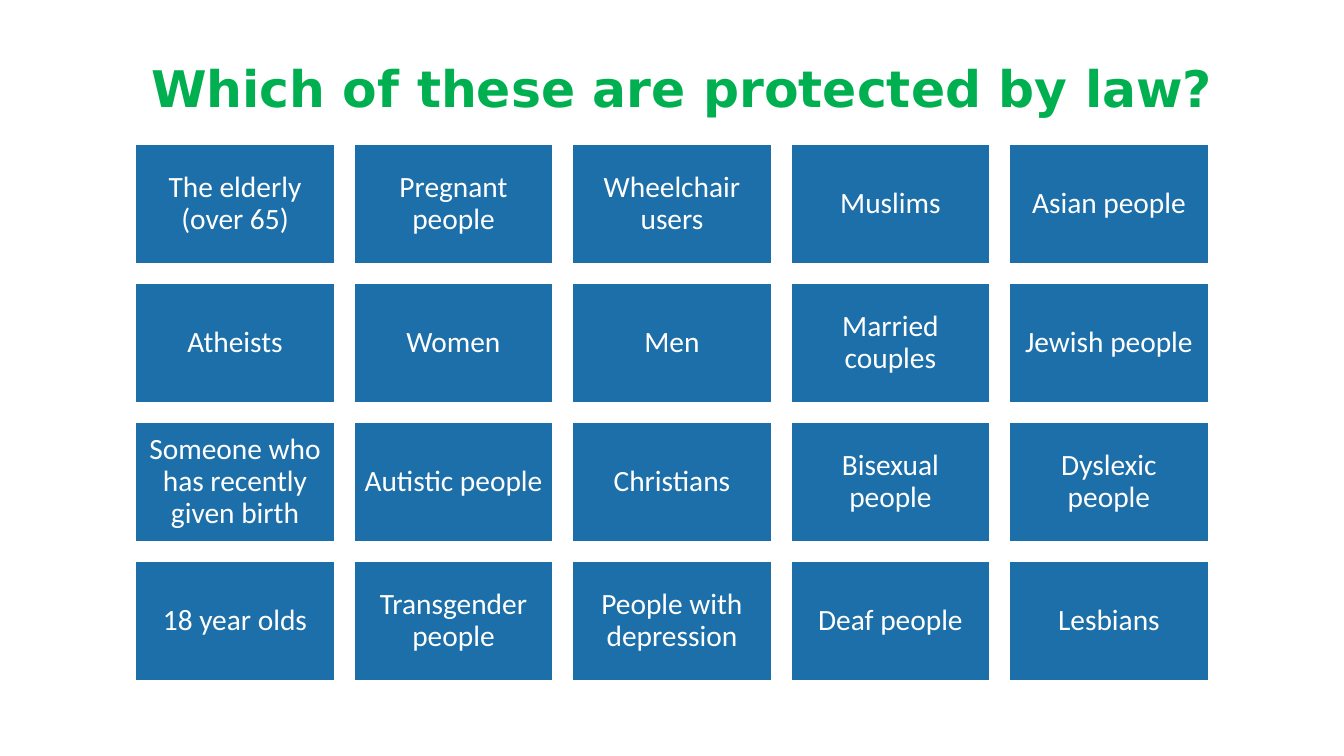
from pptx import Presentation
from pptx.dml.color import RGBColor
from pptx.enum import shapes, text
from pptx.util import Cm, Pt

GREEN, BLUE, WHITE = "00B050", "1D6FA9", "FFFFFF"
GROUPS = [
    ["The elderly (over 65)", "Pregnant people", "Wheelchair users", "Muslims", "Asian people"],
    ["Atheists", "Women", "Men", "Married couples", "Jewish people"],
    ["Someone who has recently given birth", "Autistic people", "Christians",
     "Bisexual people", "Dyslexic people"],
    ["18 year olds", "Transgender people", "People with depression", "Deaf people", "Lesbians"],
]


def color(value):
    return RGBColor.from_string(value)


def write(shape, words, font, size, fill, align, bold=False):
    """Put one vertically centred paragraph into a shape."""
    frame = shape.text_frame
    frame.word_wrap = True
    frame.vertical_anchor = text.MSO_ANCHOR.MIDDLE
    paragraph = frame.paragraphs[0]
    paragraph.alignment = align
    paragraph.line_spacing = 0.9
    run = paragraph.add_run()
    run.text = words
    run.font.name = font
    run.font.size = Pt(size)
    run.font.bold = bold
    run.font.color.rgb = color(fill)


def add_title(slide, left, top, width, height, words):
    box = slide.shapes.add_textbox(Cm(left), Cm(top), Cm(width), Cm(height))
    write(box, words, "DejaVu Sans", 36, GREEN, text.PP_ALIGN.LEFT, bold=True)


def add_tile(slide, left, top, width, height, words):
    tile = slide.shapes.add_shape(
        shapes.MSO_SHAPE.RECTANGLE, Cm(left), Cm(top), Cm(width), Cm(height))
    tile.shadow.inherit = False
    tile.fill.solid()
    tile.fill.fore_color.rgb = color(BLUE)
    tile.line.color.rgb = color(WHITE)
    tile.line.width = Pt(1)
    frame = tile.text_frame
    frame.margin_left = frame.margin_right = Cm(0.22)
    frame.margin_top = frame.margin_bottom = Cm(0.22)
    write(tile, words, "Calibri", 21, WHITE, text.PP_ALIGN.CENTER)


def add_tile_grid(slide, left, top, width, height, rows, gap=0.5):
    """Fill the box with equal tiles, one per entry."""
    tile_width = (width + gap) / len(rows[0]) - gap
    tile_height = (height + gap) / len(rows) - gap
    for row, entries in enumerate(rows):
        for column, words in enumerate(entries):
            add_tile(slide, left + column * (tile_width + gap), top + row * (tile_height + gap),
                     tile_width, tile_height, words)


def main():
    presentation = Presentation()
    presentation.slide_width = Cm(33.87)
    presentation.slide_height = Cm(19.05)
    slide = presentation.slides.add_slide(presentation.slide_layouts[6])
    add_title(slide, 3.56, 0.46, 29.21, 3.68, "Which of these are protected by law?")
    add_tile_grid(slide, 3.42, 3.64, 27.03, 13.51, GROUPS)
    presentation.save("out.pptx")


if __name__ == "__main__":
    main()
